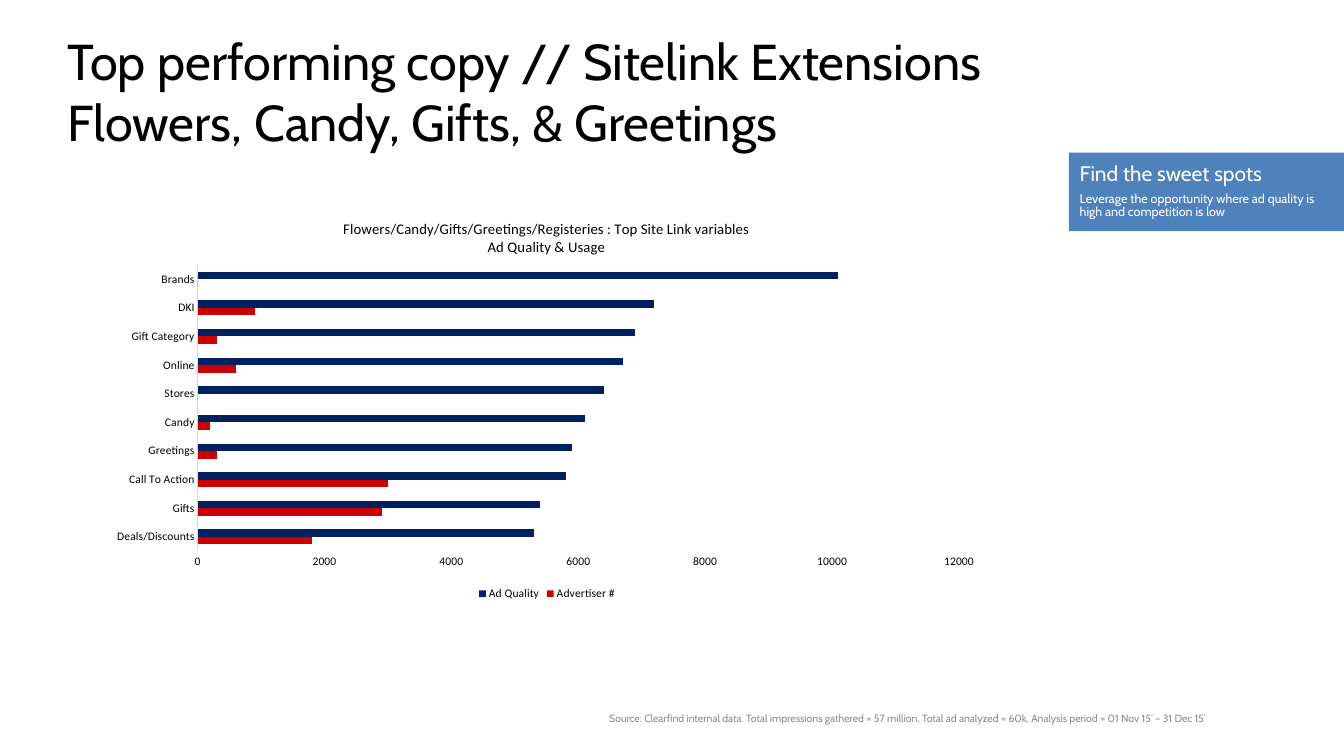
from lxml.etree import SubElement
from pptx import Presentation
from pptx.chart.data import CategoryChartData
from pptx.dml.color import RGBColor
from pptx.enum.chart import XL_CHART_TYPE, XL_LEGEND_POSITION, XL_TICK_MARK
from pptx.enum.shapes import MSO_SHAPE
from pptx.enum.text import MSO_ANCHOR, PP_ALIGN
from pptx.oxml.ns import qn
from pptx.util import Cm, Pt

HEADING_FONT = "Cabin"
CHART_FONT = "Calibri"

# Category, advertiser count, ad quality (bottom bar first)
SITELINKS = [
    ("Deals/Discounts", 1800, 5300),
    ("Gifts", 2900, 5400),
    ("Call To Action", 3000, 5800),
    ("Greetings", 300, 5900),
    ("Candy", 200, 6100),
    ("Stores", 0, 6400),
    ("Online", 600, 6700),
    ("Gift Category", 300, 6900),
    ("DKI", 900, 7200),
    ("Brands", 0, 10100),
]
SERIES_COLORS = ["CC0000", "002060"]


def color(value):
    return RGBColor.from_string(value)


def set_font(font, size, fill="000000", name=CHART_FONT):
    font.size = Pt(size)
    font.name = name
    font.bold = False
    font.color.rgb = color(fill)


def add_text(frame, text, size, fill="000000", font=HEADING_FONT,
             align=PP_ALIGN.LEFT, line_spacing=None, space_after=None):
    """Fill the first free paragraph of a frame; a newline is a line break."""
    paragraph = frame.paragraphs[0]
    if paragraph.runs:
        paragraph = frame.add_paragraph()
    paragraph.text = text
    paragraph.alignment = align
    if line_spacing is not None:
        paragraph.line_spacing = line_spacing
    if space_after is not None:
        paragraph.space_after = Pt(space_after)
    for run in paragraph.runs:
        set_font(run.font, size, fill, font)


def set_frame(frame, left=0, top=0, right=0, bottom=0):
    frame.word_wrap = True
    frame.vertical_anchor = MSO_ANCHOR.TOP
    frame.margin_left, frame.margin_top = Cm(left), Cm(top)
    frame.margin_right, frame.margin_bottom = Cm(right), Cm(bottom)


def add_text_box(slide, left, top, width, height, text, **text_format):
    box = slide.shapes.add_textbox(Cm(left), Cm(top), Cm(width), Cm(height))
    set_frame(box.text_frame)
    add_text(box.text_frame, text, **text_format)


def add_callout(slide, left, top, width, height, heading, body):
    shape = slide.shapes.add_shape(
        MSO_SHAPE.RECTANGLE, Cm(left), Cm(top), Cm(width), Cm(height))
    shape.shadow.inherit = False
    shape.fill.solid()
    shape.fill.fore_color.rgb = color("4F81BD")
    shape.line.fill.background()
    set_frame(shape.text_frame, 0.36, 0.36, 0.25, 0.25)
    for text, size in ((heading, 20), (body, 12)):
        add_text(shape.text_frame, text, size, fill="FFFFFF",
                 line_spacing=0.9, space_after=6)


def set_layout(element, index, **settings):
    """Place a chart part by fractions of the chart's size."""
    for old_layout in element.findall(qn("c:layout")):
        element.remove(old_layout)
    layout = SubElement(element, qn("c:layout"))
    element.insert(index, layout)
    manual = SubElement(layout, qn("c:manualLayout"))
    for key, value in settings.items():
        SubElement(manual, qn(f"c:{key}")).set("val", str(value))


def style_axis(axis):
    axis.has_major_gridlines = False
    axis.major_tick_mark = XL_TICK_MARK.NONE
    axis.minor_tick_mark = XL_TICK_MARK.NONE
    set_font(axis.tick_labels.font, 11)


def add_sitelink_chart(slide, left, top, width, height):
    categories, advertisers, quality = zip(*SITELINKS)
    data = CategoryChartData(number_format="General")
    data.categories = categories
    data.add_series("Advertiser #", advertisers)
    data.add_series("Ad Quality", quality)
    chart = slide.shapes.add_chart(
        XL_CHART_TYPE.BAR_CLUSTERED, Cm(left), Cm(top), Cm(width), Cm(height),
        data).chart
    set_font(chart.font, 10)

    # Title
    chart.has_title = True
    for line in ("Flowers/Candy/Gifts/Greetings/Registeries : Top Site Link variables",
                 "Ad Quality & Usage"):
        add_text(chart.chart_title.text_frame, line, 14, font=CHART_FONT,
                 align=PP_ALIGN.CENTER)

    # Bars
    plot = chart.plots[0]
    plot.gap_width = 182
    plot.overlap = 0
    plot.vary_by_categories = False
    for series, fill in zip(plot.series, SERIES_COLORS):
        series.format.fill.solid()
        series.format.fill.fore_color.rgb = color(fill)
        series.invert_if_negative = False

    # Axes
    style_axis(chart.category_axis)
    axis_line = chart.category_axis.format.line
    axis_line.color.rgb = color("D9D9D9")
    axis_line.width = Pt(0.75)
    style_axis(chart.value_axis)
    chart.value_axis.format.line.fill.background()
    chart.value_axis.minimum_scale = 0
    chart.value_axis.maximum_scale = 12000
    chart.value_axis.major_unit = 2000

    # Legend
    chart.has_legend = True
    chart.legend.position = XL_LEGEND_POSITION.BOTTOM
    chart.legend.include_in_layout = False
    set_font(chart.legend.font, 11)

    # Title and plot positions
    chart_space = chart.element
    set_layout(chart_space.find(".//" + qn("c:title")), 1,
               xMode="edge", yMode="edge", x=0.27, y=0.04)
    set_layout(chart_space.find(".//" + qn("c:plotArea")), 0,
               layoutTarget="inner", xMode="edge", yMode="edge",
               x=0.11, y=0.16, w=0.85, h=0.71)


def main():
    presentation = Presentation()
    presentation.slide_width = Cm(45.16)
    presentation.slide_height = Cm(25.4)
    slide = presentation.slides.add_slide(presentation.slide_layouts[6])

    # Heading
    add_text_box(slide, 2.26, 1.02, 40.64, 4.11,
                 "Top performing copy // Sitelink Extensions\n"
                 "Flowers, Candy, Gifts, & Greetings", size=48)
    # Source line
    add_text_box(slide, 20.47, 23.93, 22.43, 0.43,
                 "Source: Clearfind internal data. Total impressions gathered = "
                 "57 million, Total ad analyzed = 60k, Analysis period = "
                 "01 Nov 15’ – 31 Dec 15’", size=10, fill="8C8C8C")
    # Takeaway
    add_callout(slide, 35.92, 5.13, 9.24, 2.64, "Find the sweet spots",
                "Leverage the opportunity where ad quality is high and "
                "competition is low")
    # Chart
    add_sitelink_chart(slide, 3.33, 6.73, 30.1, 13.56)

    presentation.save("out.pptx")


if __name__ == "__main__":
    main()
